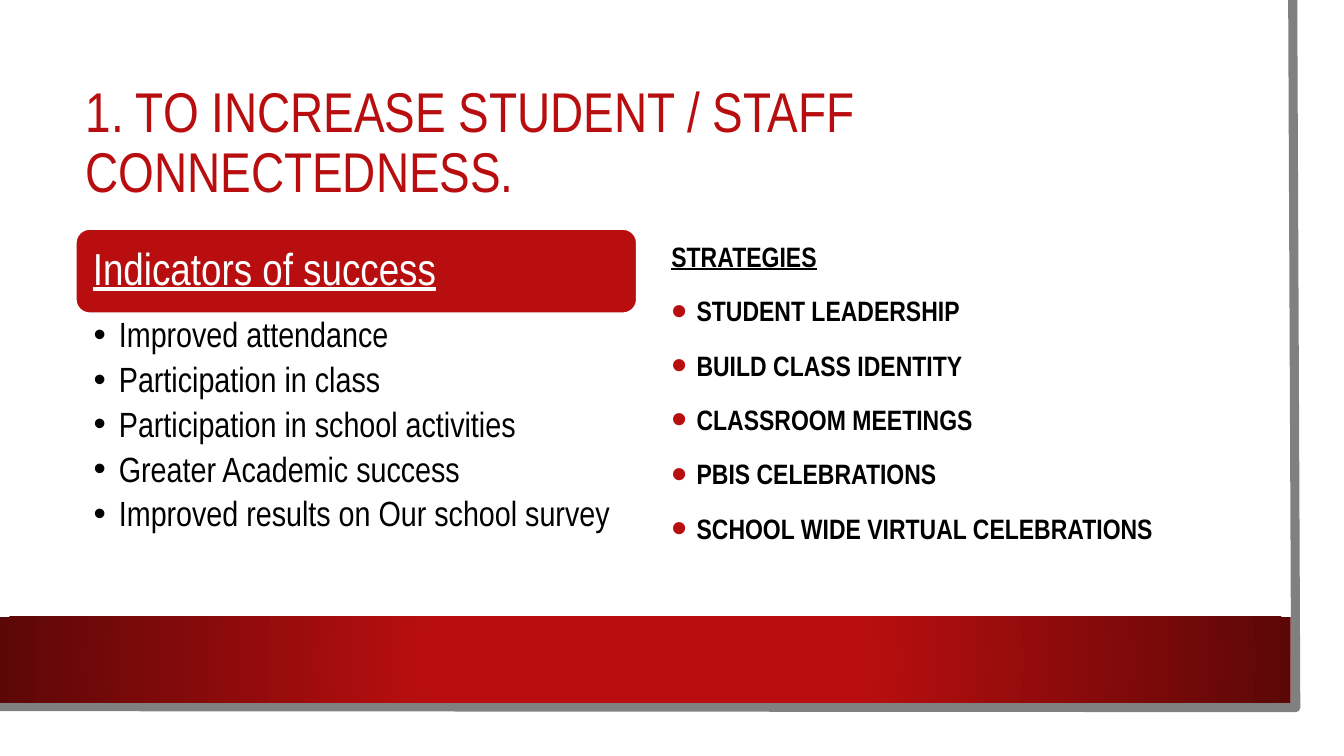
import pptx
import pptx.dml.color
import pptx.enum.shapes
import pptx.enum.text
import pptx.oxml
import pptx.oxml.ns
import pptx.util

RED = pptx.dml.color.RGBColor(0xB8, 0x0E, 0x0F)
DARK = pptx.dml.color.RGBColor(0x5C, 0x07, 0x07)
GRAY = pptx.dml.color.RGBColor(0x80, 0x80, 0x80)
WHITE = pptx.dml.color.RGBColor(0xFF, 0xFF, 0xFF)
BLACK = pptx.dml.color.RGBColor(0, 0, 0)
COLS, ROWS = 160, 90
LEFT, WIDE = 9, 66.84
GOALS = ["Improved attendance", "Participation in class",
         "Participation in school activities", "Greater Academic success",
         "Improved results on Our school survey"]
PLANS = ["STUDENT LEADERSHIP", "BUILD CLASS IDENTITY", "CLASSROOM MEETINGS",
         "PBIS CELEBRATIONS", "SCHOOL WIDE VIRTUAL CELEBRATIONS"]


def node(tag, inner="", **attrs):
    pairs = "".join(f' {key}="{val}"' for key, val in attrs.items())
    space = pptx.oxml.ns.nsdecls("a")
    return pptx.oxml.parse_xml(f"<a:{tag} {space}{pairs}>{inner}</a:{tag}>")


def write(frame, text, size=20, color=BLACK, bold=False, under=False,
          line=0.9, before=0, after=0, dot=None, scale=100, first=False):
    para = frame.paragraphs[0] if first else frame.add_paragraph()
    para.alignment = pptx.enum.text.PP_ALIGN.LEFT
    para.line_spacing = line
    para.space_before = pptx.util.Pt(0 if first else before)
    para.space_after = pptx.util.Pt(after)
    if dot is not None:
        props = para._p.get_or_add_pPr()
        indent = pptx.util.Inches(0.25)
        props.set("marL", str(indent))
        props.set("indent", str(-indent))
        props.append(node("buClr", f'<a:srgbClr val="{dot}"/>'))
        props.append(node("buSzPct", val=scale * 1000))
        props.append(node("buFont", typeface="Arial"))
        props.append(node("buChar", char="•"))
    run = para.add_run()
    run.text = text
    font = run.font
    font.name = "Arial Narrow"
    font.size = pptx.util.Pt(size)
    font.color.rgb = color
    font.bold = bold
    font.underline = under


class Page:
    """Hold the style and the current slide, placing shapes on a grid."""

    def __init__(self, deck):
        self.wide = deck.slide_width
        self.high = deck.slide_height
        self.slide = deck.slides.add_slide(deck.slide_layouts[5])
        self.shapes = self.slide.shapes

    def spot(self, col, row):
        return round(self.wide * col / COLS), round(self.high * row / ROWS)

    def area(self, col, row, cols, rows):
        return self.spot(col, row) + self.spot(cols, rows)

    def frame(self, shape, pads, anchor):
        frame = shape.text_frame
        frame.word_wrap = True
        frame.auto_size = pptx.enum.text.MSO_AUTO_SIZE.NONE
        frame.vertical_anchor = anchor
        (frame.margin_left, frame.margin_top, frame.margin_right,
         frame.margin_bottom) = [pptx.util.Inches(pad) for pad in pads]
        return frame

    def title(self, text, *area):
        shape = self.shapes.title
        shape.left, shape.top, shape.width, shape.height = self.area(*area)
        self.shapes._spTree.append(shape._element)
        frame = self.frame(shape, (0.1, 0.08, 0.1, 0.05),
                           pptx.enum.text.MSO_ANCHOR.TOP)
        write(frame, text, size=40, color=RED, first=True)

    def box(self, kind, fill, *area):
        shape = self.shapes.add_shape(kind, *self.area(*area))
        shape.shadow.inherit = False
        shape.fill.solid()
        shape.fill.fore_color.rgb = fill
        shape.line.fill.background()
        return shape

    def band(self, *area):
        shape = self.box(pptx.enum.shapes.MSO_SHAPE.RECTANGLE, RED, *area)
        shape.fill.gradient()
        for stop, color, place in zip(shape.fill.gradient_stops,
                                      (RED, DARK), (0.34, 1)):
            stop.color.rgb = color
            stop.position = place
        lin = shape._element.spPr.find(".//" + pptx.oxml.ns.qn("a:lin"))
        center = '<a:fillToRect l="50000" t="50000" r="50000" b="50000"/>'
        lin.getparent().replace(lin, node("path", center, path="circle"))

    def edge(self, *spots):
        start, *rest = [self.spot(*spot) for spot in spots]
        form = self.shapes.build_freeform(*start)
        form.add_line_segments(rest, close=False)
        shape = form.convert_to_shape()
        shape.shadow.inherit = False
        shape.fill.background()
        shape.line.color.rgb = GRAY
        shape.line.width = pptx.util.Pt(6.5)

    def head(self, text, *area):
        shape = self.box(pptx.enum.shapes.MSO_SHAPE.ROUNDED_RECTANGLE, RED, *area)
        shape.line.color.rgb = WHITE
        shape.line.width = pptx.util.Pt(1.5)
        frame = self.frame(shape, (0.13, 0.13, 0.13, 0.13),
                           pptx.enum.text.MSO_ANCHOR.MIDDLE)
        write(frame, text, size=32, color=WHITE, under=True, first=True)

    def text(self, pads, *area):
        shape = self.shapes.add_textbox(*self.area(*area))
        return self.frame(shape, pads, pptx.enum.text.MSO_ANCHOR.TOP)


def main():
    deck = pptx.Presentation()
    deck.slide_width = pptx.util.Inches(13.33)
    deck.slide_height = pptx.util.Inches(7.5)
    page = Page(deck)
    page.box(pptx.enum.shapes.MSO_SHAPE.RECTANGLE, WHITE, 0, 0, 157.2, 87.24)
    page.edge((153.9, 0), (154.26, 84.24), (-0.36, 84.12))
    page.band(0, 73.44, 153.65, 10.2)
    page.title("1. TO INCREASE STUDENT / STAFF CONNECTEDNESS.",
               LEFT, 9, 136.5, 26)
    page.head("Indicators of success", LEFT, 27.24, WIDE, 10.08)
    goals = page.text((0.18, 0.04, 0.25, 0.04), LEFT, 37.32, WIDE, 33)
    for rank, goal in enumerate(GOALS):
        write(goals, goal, size=25, after=5, dot=BLACK, first=rank == 0)
    plans = page.text((0.1, 0.05, 0.1, 0.05), 78.75, 27.12, WIDE, 43.44)
    write(plans, "STRATEGIES", bold=True, under=True, line=1.2, first=True)
    for plan in PLANS:
        write(plans, plan, bold=True, line=1.2, before=10, dot=RED, scale=160)
    deck.save("out.pptx")


if __name__ == "__main__":
    main()
